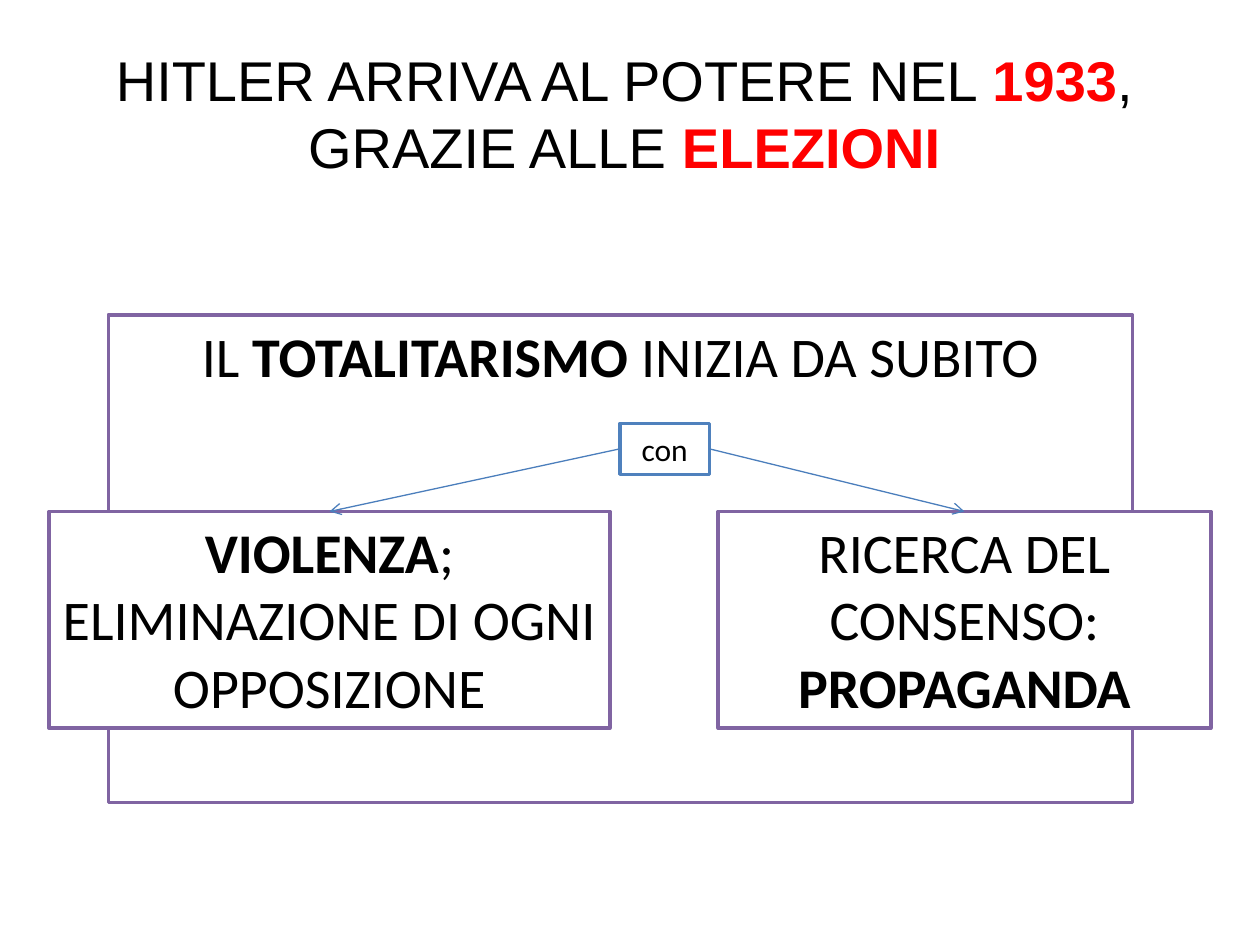
"""Build a slide on the rise to power in 1933 and the two means of totalitarianism."""
import pptx
import pptx.util
import pptx.dml.color
import pptx.enum.shapes
import pptx.enum.text
import pptx.oxml

COLORS = {"black": "000000", "red": "FF0000", "white": "FFFFFF",
          "purple": "8064A2", "blue": "4F81BD", "arrow": "4B7EBC"}
DRAWING = 'xmlns:a="http://schemas.openxmlformats.org/drawingml/2006/main"'


def color(name):
    return pptx.dml.color.RGBColor.from_string(COLORS[name])


def write(box, paragraphs, font, size):
    frame = box.text_frame
    frame_format = {"word_wrap": True,
                    "auto_size": pptx.enum.text.MSO_AUTO_SIZE.NONE,
                    "vertical_anchor": pptx.enum.text.MSO_ANCHOR.TOP}
    for name, value in frame_format.items():
        setattr(frame, name, value)
    for index, spans in enumerate(paragraphs):
        para = frame.add_paragraph() if index else frame.paragraphs[0]
        para.alignment = pptx.enum.text.PP_ALIGN.CENTER
        for text, bold, ink in spans:
            span = para.add_run()
            span.text = text
            span_format = {"name": font, "size": pptx.util.Pt(size), "bold": bold}
            for name, value in span_format.items():
                setattr(span.font, name, value)
            span.font.color.rgb = color(ink)


deck = pptx.Presentation()
deck.slide_width = pptx.util.Inches(10)
deck.slide_height = pptx.util.Inches(7.5)
page = deck.slides.add_slide(deck.slide_layouts[6])
column = deck.slide_width / 100
row = deck.slide_height / 100

title = page.shapes.add_textbox(int(6.2 * column), int(4.13 * row),
                                int(86.7 * column), int(15.73 * row))
write(title, [[("HITLER ARRIVA AL POTERE NEL ", False, "black"), ("1933", True, "red"),
               (", GRAZIE ALLE ", False, "black"), ("ELEZIONI", True, "red")]], "Arial", 32)

branch_top, branch_height = 54.13, 22.93
panels = {
    "regime": ((8.6, 33.33, 81.3, 51.6), "purple", 32,
               [[("IL ", False, "black"), ("TOTALITARISMO", True, "black"),
                 (" INIZIA DA SUBITO", False, "black")]]),
    "violence": ((3.9, branch_top, 44.5, branch_height), "purple", 32,
                 [[("VIOLENZA", True, "black"), (";", False, "black")],
                  [("ELIMINAZIONE DI OGNI OPPOSIZIONE", False, "black")]]),
    "consensus": ((57, branch_top, 39.1, branch_height), "purple", 32,
                  [[("RICERCA DEL CONSENSO:", False, "black")],
                   [("PROPAGANDA", True, "black")]]),
    "with": ((49.2, 44.8, 7.1, 5.4), "blue", 18, [[("con", False, "black")]]),
}
boxes = {}
for key, ((left, top, width, height), outline, size, paragraphs) in panels.items():
    box = page.shapes.add_shape(pptx.enum.shapes.MSO_SHAPE.RECTANGLE,
                                int(left * column), int(top * row),
                                int(width * column), int(height * row))
    box.shadow.inherit = False
    box.fill.solid()
    box.fill.fore_color.rgb = color("white")
    box.line.color.rgb = color(outline)
    box.line.width = pptx.util.Pt(2)
    write(box, paragraphs, "Calibri", size)
    boxes[key] = box

left_site, right_site, top_site = 1, 3, 0
for key, site in (("violence", left_site), ("consensus", right_site)):
    arrow = page.shapes.add_connector(pptx.enum.shapes.MSO_CONNECTOR.STRAIGHT, 0, 0, 0, 0)
    arrow.begin_connect(boxes["with"], site)
    arrow.end_connect(boxes[key], top_site)
    arrow.line.color.rgb = color("arrow")
    arrow.line.width = pptx.util.Pt(0.75)
    arrow.line._get_or_add_ln().append(
        pptx.oxml.parse_xml(f'<a:tailEnd {DRAWING} type="arrow"/>'))
    arrow._element.spPr.append(pptx.oxml.parse_xml(f"<a:effectLst {DRAWING}/>"))

deck.save("out.pptx")
